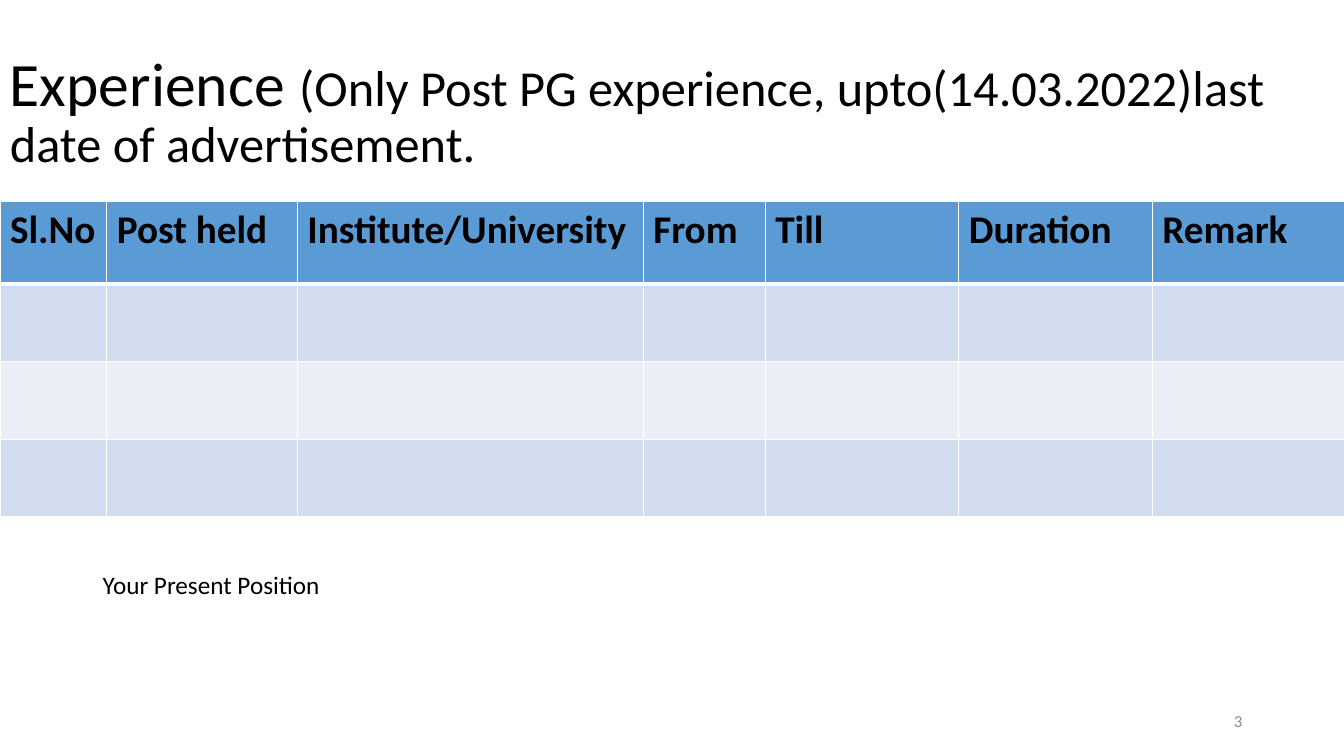
from lxml.etree import SubElement
from pptx import Presentation
from pptx.dml.color import RGBColor
from pptx.enum.text import MSO_ANCHOR, PP_ALIGN
from pptx.oxml.ns import qn
from pptx.util import Inches, Pt

COLORS = {
    "text": "000000",
    "muted": "8C8C8C",
    "head": "5B9BD5",
    "odd": "D2DEEF",
    "even": "EAEFF7",
    "line": "FFFFFF",
}
HEADS = ["Sl.No", "Post held", "Institute/University", "From", "Till",
         "Duration", "Remark"]
WIDTHS = [1.06, 1.89, 3.43, 1.21, 1.92, 1.92, 1.92]
HEIGHTS = [0.82, 0.77, 0.77, 0.77]


def rgb(name):
    return RGBColor.from_string(COLORS[name])


def add_run(para, text, size=18, color="text", bold=False, font="Calibri"):
    run = para.add_run()
    run.text = text
    run.font.name = font
    run.font.size = Pt(size)
    run.font.bold = bold
    run.font.color.rgb = rgb(color)


class Page:
    def __init__(self, deck):
        self.slide = deck.slides.add_slide(deck.slide_layouts[6])

    def text(self, box, runs, anchor=MSO_ANCHOR.TOP, align=PP_ALIGN.LEFT,
             space=1.0):
        shape = self.slide.shapes.add_textbox(*map(Inches, box))
        frame = shape.text_frame
        frame.word_wrap = True
        frame.vertical_anchor = anchor
        para = frame.paragraphs[0]
        para.alignment = align
        para.line_spacing = space
        for text, style in runs:
            add_run(para, text, **style)

    def border(self, cell, sides):
        props = cell._tc.get_or_add_tcPr()
        for side, width in sides.items():
            line = SubElement(props, qn(f"a:ln{side}"), w=str(Pt(width)))
            fill = SubElement(line, qn("a:solidFill"))
            SubElement(fill, qn("a:srgbClr"), val=COLORS["line"])

    def table(self, left, top, heads, widths, heights):
        table = self.slide.shapes.add_table(
            len(heights), len(widths), Inches(left), Inches(top),
            Inches(sum(widths)), Inches(sum(heights))).table
        for col, width in zip(table.columns, widths):
            col.width = Inches(width)
        for i, height in enumerate(heights):
            table.rows[i].height = Inches(height)
            shade = "head" if i == 0 else "odd" if i % 2 else "even"
            for j, head in enumerate(heads):
                cell = table.cell(i, j)
                self.border(cell, {"L": 1, "R": 1, "T": 3 if i == 1 else 1,
                                   "B": 3 if i == 0 else 1})
                cell.fill.solid()
                cell.fill.fore_color.rgb = rgb(shade)
                if i == 0:
                    add_run(cell.text_frame.paragraphs[0], head, size=28,
                            bold=True)


def main():
    deck = Presentation()
    deck.slide_width = Inches(13.33)
    deck.slide_height = Inches(7.5)
    page = Page(deck)

    # Title
    page.text((0, 0.4, 13.33, 1.45), [
        ("Experience ", {"size": 44}),
        ("(Only Post PG experience, upto(14.03.2022)last date of "
         "advertisement.", {"size": 36}),
    ], anchor=MSO_ANCHOR.MIDDLE, space=0.9)

    # Experience table
    page.table(0, 2, HEADS, WIDTHS, HEIGHTS)

    # Slide number
    page.text((9.42, 6.95, 3, 0.4), [("3", {"size": 12, "color": "muted"})],
              anchor=MSO_ANCHOR.MIDDLE, align=PP_ALIGN.RIGHT)

    # Present position
    page.text((0.92, 5.6, 2.54, 0.4), [("Your Present Position", {})])

    deck.save("out.pptx")


if __name__ == "__main__":
    main()
